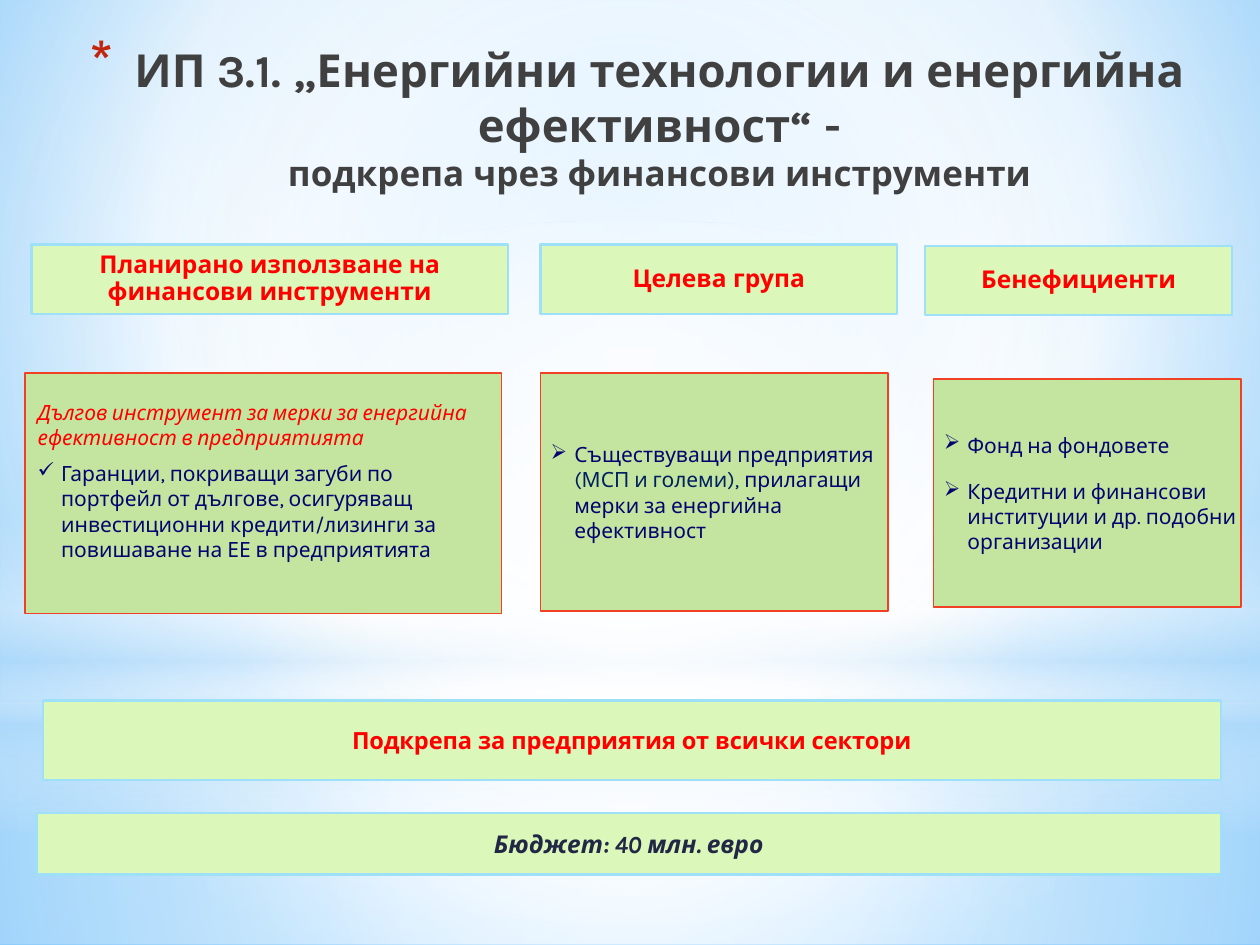
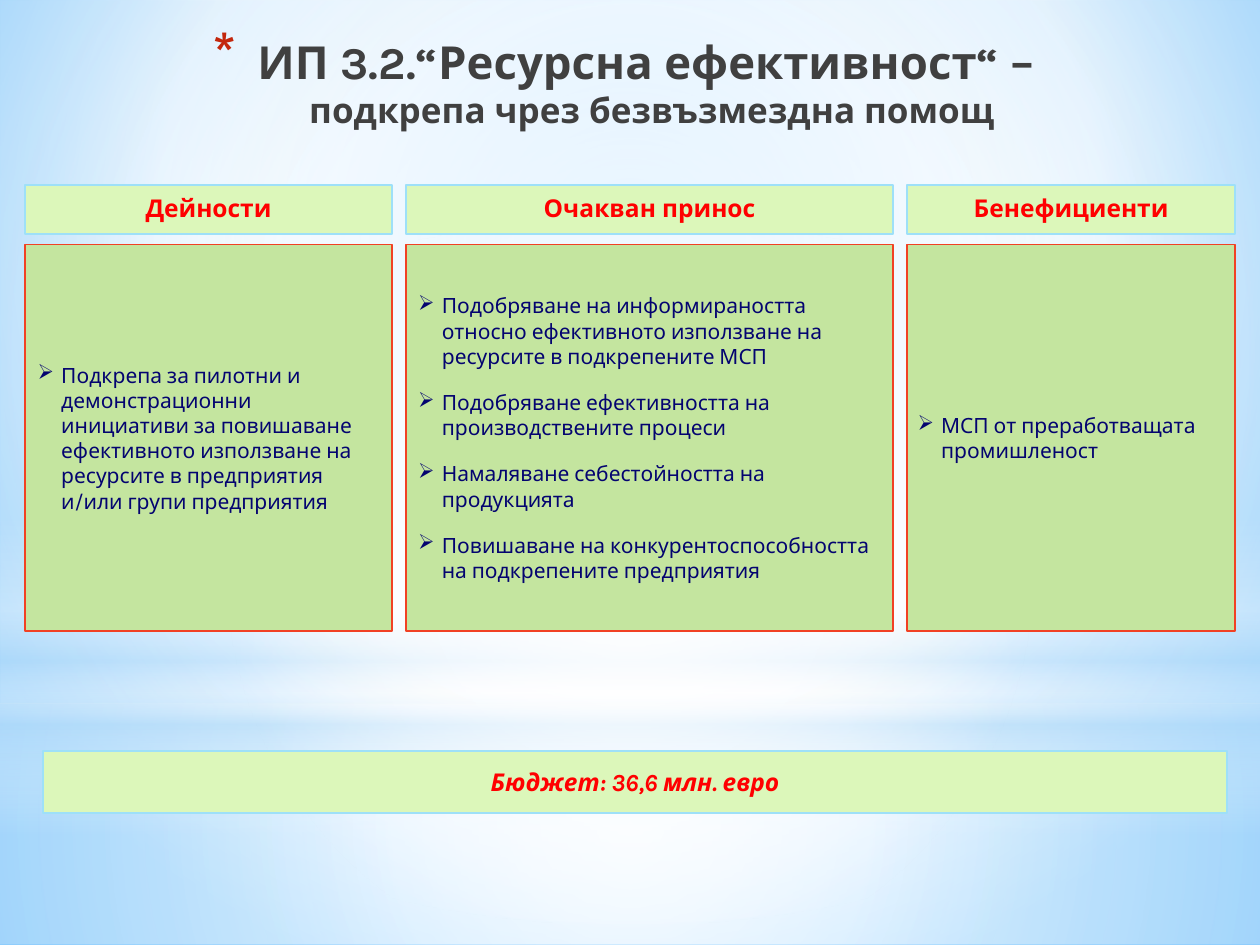
import pptx
import pptx.dml.color
import pptx.enum.shapes
import pptx.enum.text
import pptx.oxml
import pptx.oxml.ns
import pptx.util
from lxml import etree

Pt = pptx.util.Pt
RGBColor = pptx.dml.color.RGBColor
qn = pptx.oxml.ns.qn
SHAPES = pptx.enum.shapes.MSO_SHAPE
ALIGN = pptx.enum.text.PP_ALIGN
MIDDLE = pptx.enum.text.MSO_ANCHOR.MIDDLE

FONT = "Karla"
PALE_GREEN = RGBColor(0xDC, 0xF7, 0xBA)
GREEN = RGBColor(0xC4, 0xE5, 0x9F)
SKY = RGBColor(0x9E, 0xE0, 0xF8)
ORANGE = RGBColor(0xF1, 0x41, 0x24)
RED = RGBColor(0xFF, 0x00, 0x00)
NAVY = RGBColor(0x04, 0x04, 0x70)
DARK_BLUE = RGBColor(0x00, 0x20, 0x60)
INK = RGBColor(0x21, 0x27, 0x45)
CHARCOAL = RGBColor(0x40, 0x40, 0x40)
STAR_RED = RGBColor(0xC3, 0x26, 0x0C)
WHITE = RGBColor(0xFF, 0xFF, 0xFF)
HAZE = RGBColor(0xB4, 0xDC, 0xFA)
LIGHT_BLUE = RGBColor(0x9E, 0xD5, 0xFF)
DEEP_BLUE = RGBColor(0x5B, 0xB9, 0xFF)

WIDTH, HEIGHT = 720, 540
INSETS = (7.2, 3.6, 7.2, 3.6)
TIGHT_RIGHT = (5.8, 3.6, 0, 3.6)
ARROW, CHECK = "➢", "✓"


def add_box(slide, place, fill, line, line_width, insets=INSETS):
    """Add a bordered rectangle and return its empty text frame."""
    box = slide.shapes.add_shape(SHAPES.RECTANGLE, *map(Pt, place))
    box.shadow.inherit = False
    box.fill.solid()
    box.fill.fore_color.rgb = fill
    box.line.color.rgb = line
    box.line.width = Pt(line_width)
    frame = box.text_frame
    frame.word_wrap = True
    frame.vertical_anchor = MIDDLE
    (frame.margin_left, frame.margin_top,
     frame.margin_right, frame.margin_bottom) = map(Pt, insets)
    return frame


def set_bullet(paragraph, character, indent, color=None, percent=100):
    """Give the paragraph a hanging bullet."""
    properties = paragraph._p.get_or_add_pPr()
    properties.set("marL", str(Pt(indent)))
    properties.set("indent", str(-Pt(indent)))
    if color is not None:
        bullet_color = etree.SubElement(properties, qn("a:buClr"))
        etree.SubElement(bullet_color, qn("a:srgbClr"), val=str(color))
    etree.SubElement(properties, qn("a:buSzPct"), val=str(percent * 1000))
    etree.SubElement(properties, qn("a:buChar"), char=character)


deck = pptx.Presentation()
deck.slide_width, deck.slide_height = Pt(WIDTH), Pt(HEIGHT)
master = deck.slide_master
title_only = deck.slide_layouts[5]
slides = [deck.slides.add_slide(title_only) for _ in range(2)]

# Shared backdrop: page gradient first, then translucent layers on the master
# Each layer: shape, place, gradient centre (None = vertical), stops
CENTRE = (50, 50, 50, 50)
backdrop = [
    (None, None, (20, 10, 20, 60),
     [(0, LIGHT_BLUE, 100), (60, WHITE, 100), (100, DEEP_BLUE, 100)]),
    (SHAPES.RECTANGLE, (0, 402, WIDTH, 138), CENTRE,
     [(0, WHITE, 91), (37, WHITE, 76), (100, HAZE, 79)]),
    (SHAPES.RECTANGLE, (0, 0, WIDTH, 402), CENTRE,
     [(0, WHITE, 89), (48, WHITE, 62), (100, HAZE, 79)]),
    (SHAPES.RECTANGLE, (0, 296.6, WIDTH, 180), None,
     [(0, WHITE, 0), (29, WHITE, 30), (45, HAZE, 40),
      (55, WHITE, 26), (65, HAZE, 60), (100, WHITE, 0)]),
    (SHAPES.OVAL, (0, 126, WIDTH, 402), CENTRE,
     [(0, WHITE, 100), (56, WHITE, 0)]),
]
for order, (outline, place, centre, stops) in enumerate(backdrop):
    if outline is None:
        master.background.fill.solid()
        holder = master.element.find(".//" + qn("p:bg"))
    else:
        layer = slides[0].shapes.add_shape(outline, *map(Pt, place))
        layer.shadow.inherit = False
        layer.line.fill.background()
        layer.fill.solid()
        holder = layer.element
        holder.nvSpPr.cNvPr.set("id", str(100 + order))
        master.shapes.element.insert(1 + order, holder)

    gradient = pptx.oxml.parse_xml(
        '<a:gradFill rotWithShape="1" xmlns:a='
        '"http://schemas.openxmlformats.org/drawingml/2006/main"><a:gsLst/></a:gradFill>')
    for position, color, opacity in stops:
        stop = etree.SubElement(gradient[0], qn("a:gs"), pos=str(position * 1000))
        shade = etree.SubElement(stop, qn("a:srgbClr"), val=str(color))
        if opacity < 100:
            etree.SubElement(shade, qn("a:alpha"), val=str(opacity * 1000))
    if centre is None:
        etree.SubElement(gradient, qn("a:lin"), ang="5400000", scaled="0")
    else:
        circle = etree.SubElement(gradient, qn("a:path"))
        circle.set("path", "circle")
        sides = {side: str(value * 1000) for side, value in zip("ltrb", centre)}
        etree.SubElement(circle, qn("a:fillToRect"), **sides)
    plain_fill = holder.find(".//" + qn("a:solidFill"))
    plain_fill.getparent().replace(plain_fill, gradient)

# Titles: left, top, main line, second line
titles = [
    (4.3, 20.2, "ИП 3.1. „Енергийни технологии и енергийна ефективност“ -",
     "подкрепа чрез финансови инструменти"),
    (0, 0, "ИП 3.2.“Ресурсна ефективност“ – ",
     "подкрепа чрез безвъзмездна помощ"),
]
for slide, (left, top, measure, support) in zip(slides, titles):
    title = slide.shapes.title
    title.left, title.top, title.width, title.height = map(Pt, (left, top, WIDTH, 94.3))
    frame = title.text_frame
    frame.word_wrap = True
    frame.auto_size = pptx.enum.text.MSO_AUTO_SIZE.NONE
    frame.vertical_anchor = MIDDLE
    frame.text = f"{measure}\v{support}"
    heading = frame.paragraphs[0]
    heading.alignment = ALIGN.CENTER
    set_bullet(heading, "*", 25.2, STAR_RED, 128)
    for run, size in zip(heading.runs, (26, 20)):
        run.font.name, run.font.size, run.font.bold = FONT, Pt(size), True
        run.font.color.rgb = CHARCOAL

# Column grid of the second slide
GAP = 8
column_left = 14.4
columns = []
for column_width in (209.5, 278.6, 187.2):
    columns.append((column_left, column_width))
    column_left += column_width + GAP

# Column headings: place, insets, text
headings = [
    [((18, 139.7, 272.2, 39.6), (0, 0, 0, 0),
      "Планирано използване на финансови инструменти"),
     ((308.9, 139.7, 203.8, 39.6), INSETS, "Целева група"),
     ((528.5, 140.4, 175.7, 39.6), INSETS, "Бенефициенти")],
    [((left, 105.8, width, 28.1), INSETS, text)
     for (left, width), text in zip(columns, ("Дейности", "Очакван принос", "Бенефициенти"))],
]
for slide, slide_headings in zip(slides, headings):
    for place, insets, text in slide_headings:
        frame = add_box(slide, place, PALE_GREEN, SKY, 1.25, insets)
        frame.text = text
        heading = frame.paragraphs[0]
        heading.alignment = ALIGN.CENTER
        heading.line_spacing = 0.9
        font = heading.runs[0].font
        font.name, font.size, font.bold = FONT, Pt(14), True
        font.color.rgb = RED

# Column panels: place, insets, space before, paragraphs of (bullet, coloured parts)
activities, benefits, beneficiaries = [
    (left, 139.7, width, 221) for left, width in columns]
panels = [
    [((14.4, 213.1, 272.2, 137.5), (7.2, 3.6, 7.2, 18), 0, [
        (None, [("Дългов инструмент за мерки за енергийна ефективност в предприятията", RED)]),
        (CHECK, [("Гаранции, покриващи загуби по портфейл от дългове, осигуряващ "
                  "инвестиционни кредити/лизинги за повишаване на ЕЕ в предприятията", NAVY)])]),
     ((308.9, 213.1, 198.7, 136.1), TIGHT_RIGHT, 0, [
         (ARROW, [("Съществуващи предприятия ", NAVY),
                  ("(МСП и големи), ", DARK_BLUE),
                  ("прилагащи мерки за енергийна ефективност", NAVY)])]),
     ((533.5, 216.7, 175.7, 130.3), TIGHT_RIGHT, 6, [
         (ARROW, [("Фонд на фондовете", NAVY)]),
         (ARROW, [("Кредитни и финансови институции и др. подобни организации", NAVY)])])],
    [(activities, INSETS, 0, [
        (ARROW, [("Подкрепа за пилотни и демонстрационни инициативи за повишаване "
                  "ефективното използване на ресурсите в предприятия "
                  "и/или групи предприятия", NAVY)])]),
     (benefits, (7.2, 3.6, 2.9, 3.6), 6, [
         (ARROW, [(benefit, NAVY)]) for benefit in (
             "Подобряване на информираността относно ефективното използване "
             "на ресурсите в подкрепените МСП",
             "Подобряване ефективността на производствените процеси",
             "Намаляване себестойността на продукцията",
             "Повишаване на конкурентоспособността на подкрепените предприятия")]),
     (beneficiaries, TIGHT_RIGHT, 0, [
         (ARROW, [("МСП от преработващата промишленост", NAVY)])])],
]
for slide, slide_panels in zip(slides, panels):
    for place, insets, space_before, items in slide_panels:
        frame = add_box(slide, place, GREEN, ORANGE, 1, insets)
        for number, (bullet, parts) in enumerate(items):
            item = frame.add_paragraph() if number else frame.paragraphs[0]
            item.alignment = ALIGN.LEFT
            item.space_before, item.space_after = Pt(space_before), Pt(6)
            if bullet:
                set_bullet(item, bullet, 13.5)
            for text, color in parts:
                run = item.add_run()
                run.text = text
                run.font.name, run.font.size = FONT, Pt(12)
                run.font.italic = bullet is None
                run.font.color.rgb = color

# Summary bars: slide, place, text, size, colour, italic, space after
bars = [
    (slides[0], (24.5, 400.3, 673.2, 45.4),
     "Подкрепа за предприятия от всички сектори", 13.5, RED, False, 6),
    (slides[0], (20.9, 464.4, 676.8, 35.3), "Бюджет: 40 млн. евро", 14, INK, True, 0),
    (slides[1], (24.5, 429.1, 676.8, 35.3), "Бюджет: 36,6 млн. евро", 14, RED, True, 0),
]
for slide, place, text, size, color, italic, space_after in bars:
    frame = add_box(slide, place, PALE_GREEN, SKY, 1.25)
    frame.text = text
    summary = frame.paragraphs[0]
    summary.alignment = ALIGN.CENTER
    summary.space_before, summary.space_after = Pt(6), Pt(space_after)
    font = summary.runs[0].font
    font.name, font.size, font.bold, font.italic = FONT, Pt(size), True, italic
    font.color.rgb = color

deck.save("out.pptx")
